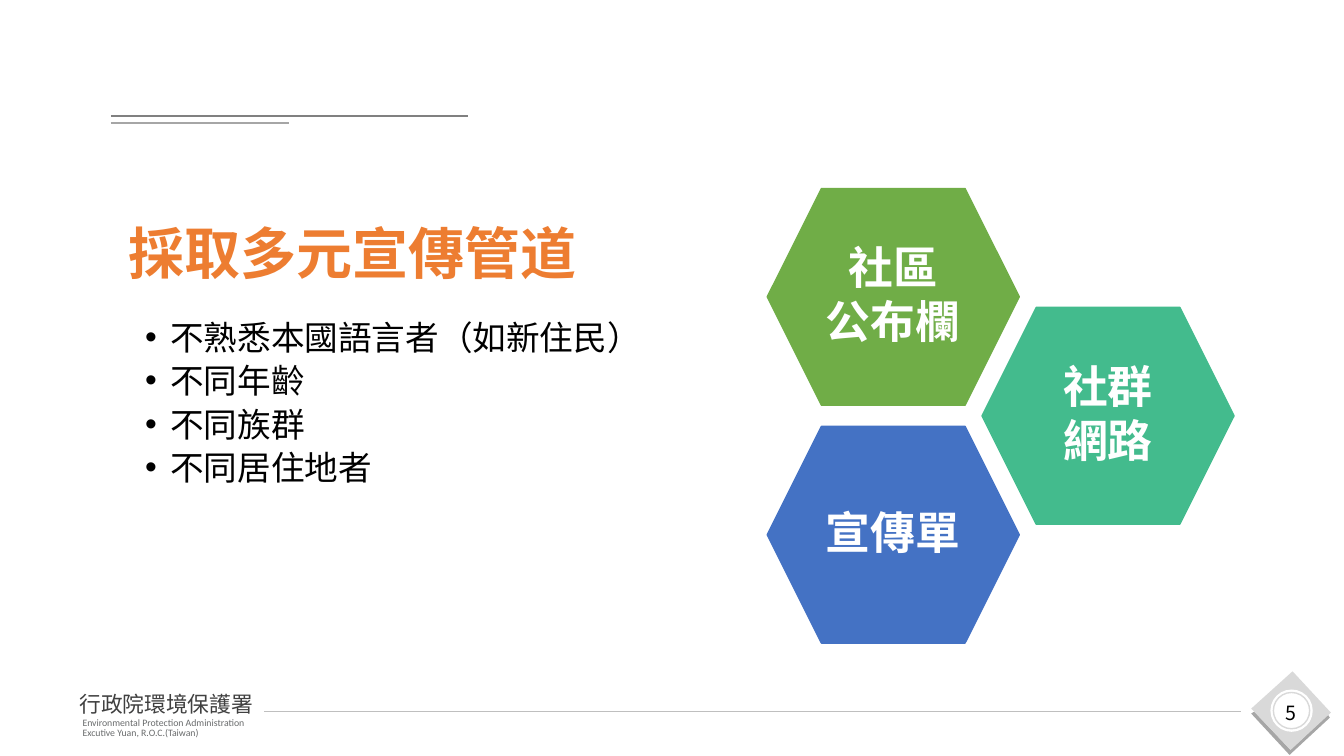
import pptx
import pptx.util
import pptx.dml.color
import pptx.enum.shapes
import pptx.enum.text
import pptx.oxml.ns
from lxml import etree
from dataclasses import dataclass

Inches, Pt = pptx.util.Inches, pptx.util.Pt
SHAPE = pptx.enum.shapes.MSO_SHAPE
ALIGN = pptx.enum.text.PP_ALIGN
ANCHOR = pptx.enum.text.MSO_ANCHOR


@dataclass(frozen=True)
class Theme:
    sans: str = "Noto Sans CJK SC"
    agency_font: str = "Noto Sans CJK JP"
    latin: str = "Calibri"
    black: str = "000000"
    white: str = "FFFFFF"
    orange: str = "ED7D31"
    green: str = "70AD47"
    teal: str = "43BB8D"
    blue: str = "4472C4"
    agency: str = "404040"
    agency_english: str = "696B6C"
    rule_dark: str = "808080"
    rule_mid: str = "A6A6A6"
    rule_light: str = "BFBFBF"
    badge: str = "D9D9D9"
    title_size: float = 40
    hexagon_size: float = 32
    body_size: float = 24
    agency_size: float = 15.5
    page_size: float = 14
    small_size: float = 7


theme = Theme()

# Content
TITLE = "採取多元宣傳管道"
AUDIENCES = ["不熟悉本國語言者（如新住民）", "不同年齡", "不同族群", "不同居住地者"]
AGENCY = "行政院環境保護署"
AGENCY_ENGLISH = ["Environmental Protection Administration", "Excutive Yuan, R.O.C.(Taiwan)"]
PAGE = "5"
# Channels: lines, colour, column, half-row
CHANNELS = [
    (["宣傳單"], theme.blue, 0, 2),
    (["社群", "網路"], theme.teal, 1, 1),
    (["社區", "公布欄"], theme.green, 0, 0),
]
# Rules: left, right, y, colour, weight
RULES = [
    (1.1, 4.64, 1.15, theme.rule_dark, 1.75),
    (1.1, 2.87, 1.22, theme.rule_mid, 1.75),
    (2.62, 12.31, 7.06, theme.rule_light, 0.5),
]

# Layout
HEX_LEFT, HEX_TOP, HEX_WIDTH, HEX_HEIGHT = 7.61, 1.87, 2.5, 2.15
HEX_COLUMN, HEX_HALF_ROW = 2.13, 1.18
BADGE_CENTRE = (12.81, 7.05)
BADGE_DIAMOND = [(12.82, 6.66), (13.2, 7.07), (12.8, 7.44), (12.41, 7.03)]
BADGE_EDGE = [(13.17, 7.09), (13.19, 7.12), (12.79, 7.49), (12.41, 7.08), (12.44, 7.06), (12.8, 7.44)]

presentation = pptx.Presentation()
presentation.slide_width, presentation.slide_height = Inches(13.33), Inches(7.5)
slide = presentation.slides.add_slide(presentation.slide_layouts[6])


def rgb(colour):
    return pptx.dml.color.RGBColor.from_string(colour)


def paint(shape, fill=None, line=None, weight=1):
    shape.shadow.inherit = False
    if fill:
        shape.fill.solid()
        shape.fill.fore_color.rgb = rgb(fill)
    else:
        shape.fill.background()
    if line:
        shape.line.color.rgb = rgb(line)
        shape.line.width = Pt(weight)
    else:
        shape.line.fill.background()


def add_bullet(paragraph):
    properties = paragraph._p.get_or_add_pPr()
    properties.set("marL", str(Inches(0.25)))
    properties.set("indent", str(-Inches(0.25)))
    for tag, name, value in (("a:buFont", "typeface", "Arial"), ("a:buChar", "char", "•")):
        etree.SubElement(properties, pptx.oxml.ns.qn(tag)).set(name, value)


def write(frame, lines, font, size, colour, bold=False, align=ALIGN.LEFT,
          spacing=None, before=0, after=0, bullet=False):
    frame.word_wrap = True
    for index, line in enumerate(lines):
        paragraph = frame.add_paragraph() if index else frame.paragraphs[0]
        paragraph.alignment = align
        if spacing:
            paragraph.line_spacing = spacing
        if before and index:
            paragraph.space_before = Pt(before)
        if after:
            paragraph.space_after = Pt(after)
        if bullet:
            add_bullet(paragraph)
        run = paragraph.add_run()
        run.text = line
        run.font.name, run.font.size, run.font.bold = font, Pt(size), bold
        run.font.color.rgb = rgb(colour)
        east_asian = etree.SubElement(run._r.get_or_add_rPr(), pptx.oxml.ns.qn("a:ea"))
        east_asian.set("typeface", font)


def add_text(box, *text, **style):
    shape = slide.shapes.add_textbox(*map(Inches, box))
    write(shape.text_frame, *text, **style)


def add_polygon(points, fill):
    corners = [(Inches(x), Inches(y)) for x, y in points]
    builder = slide.shapes.build_freeform(*corners[0], scale=1.0)
    builder.add_line_segments(corners[1:], close=True)
    paint(builder.convert_to_shape(), fill)


def add_circle(radius, fill=None, line=None):
    x, y = BADGE_CENTRE
    box = (x - radius, y - radius, 2 * radius, 2 * radius)
    paint(slide.shapes.add_shape(SHAPE.OVAL, *map(Inches, box)), fill, line)


# Rules
for left, right, y, colour, weight in RULES:
    rule = slide.shapes.add_connector(
        pptx.enum.shapes.MSO_CONNECTOR.STRAIGHT, Inches(left), Inches(y), Inches(right), Inches(y))
    rule.line.color.rgb = rgb(colour)
    rule.line.width = Pt(weight)
    etree.SubElement(rule._element.spPr, pptx.oxml.ns.qn("a:effectLst"))

# Footer
add_text((0.69, 6.8, 2.04, 0.36), [AGENCY], theme.agency_font, theme.agency_size, theme.agency)
add_text((0.72, 7.08, 2.15, 0.3), AGENCY_ENGLISH, theme.latin, theme.small_size,
         theme.agency_english, spacing=Pt(7))

# Page badge
add_polygon(BADGE_EDGE, theme.rule_mid)
add_polygon(BADGE_DIAMOND, theme.badge)
add_circle(0.21, fill=theme.white)
add_circle(0.18, line=theme.badge)
add_text((12.65, 6.9, 0.6, 0.4), [PAGE], theme.sans, theme.page_size, theme.black)

# Title and audiences
add_text((0.52, 2.12, 5.95, 0.77), [TITLE], theme.sans, theme.title_size, theme.orange,
         bold=True, align=ALIGN.CENTER)
add_text((1.34, 3.17, 5.12, 2.15), AUDIENCES, theme.sans, theme.body_size, theme.black,
         spacing=0.8, before=8, bullet=True)

# Channel hexagons
for lines, colour, column, half_row in CHANNELS:
    box = (HEX_LEFT + column * HEX_COLUMN, HEX_TOP + half_row * HEX_HALF_ROW, HEX_WIDTH, HEX_HEIGHT)
    hexagon = slide.shapes.add_shape(SHAPE.HEXAGON, *map(Inches, box))
    paint(hexagon, colour, colour)
    frame = hexagon.text_frame
    frame.margin_left = frame.margin_right = frame.margin_top = frame.margin_bottom = 0
    frame.vertical_anchor = ANCHOR.MIDDLE
    write(frame, lines, theme.sans, theme.hexagon_size, theme.white,
          bold=True, align=ALIGN.CENTER, spacing=0.9, after=4)

presentation.save("out.pptx")
